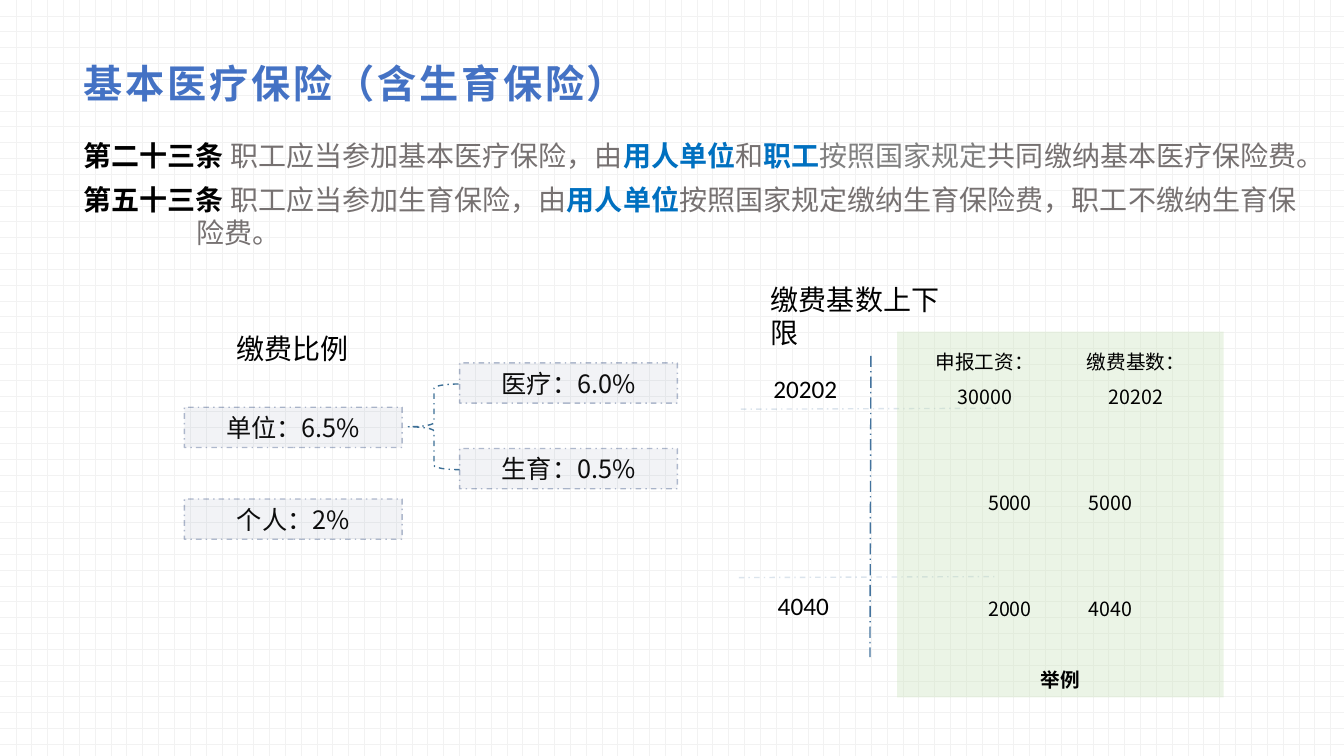
from lxml.etree import SubElement
from pptx import Presentation
from pptx.dml.color import RGBColor
from pptx.enum.dml import MSO_LINE_DASH_STYLE as Dash, MSO_PATTERN_TYPE as Pattern
from pptx.enum.shapes import MSO_CONNECTOR as Conn, MSO_SHAPE as Shape
from pptx.enum.text import MSO_ANCHOR as Anchor, PP_ALIGN as Align
from pptx.oxml.ns import qn
from pptx.util import Inches, Pt


def rgb(value):
    return RGBColor.from_string(value)


def set_alpha(fill, percent):
    color = fill._xPr.find(qn("a:solidFill"))[0]
    SubElement(color, qn("a:alpha"), val=str(percent * 1000))


class Deck:
    CJK = "Noto Sans CJK SC"
    BLACK, GRAY, MID, BLUE = "000000", "767171", "808080", "0070C0"
    NAVY, TITLE, RULE, BRACE = "002060", "4472C4", "43739E", "3C6F96"
    GREEN, INK = "C5E0B4", "0D0D0D"

    def __init__(self):
        self.prs = Presentation()
        self.prs.slide_width, self.prs.slide_height = Inches(13.33), Inches(7.5)
        self.s = self.prs.slides.add_slide(self.prs.slide_layouts[5])
        fill = self.s.background.fill
        fill.patterned()
        fill.pattern = Pattern.DOTTED_GRID
        fill.fore_color.rgb, fill.back_color.rgb = rgb("F2F2F2"), rgb("FFFFFF")

    def at(self, x, y):
        return int(self.prs.slide_width * x / 100), int(self.prs.slide_height * y / 100)

    def box(self, x, y, w, h):
        return *self.at(x, y), *self.at(w, h)

    def font(self, r, size, color, bold=False, name=CJK):
        r.font.size, r.font.bold, r.font.name = Pt(size), bold, name
        r.font.color.rgb = rgb(color)
        SubElement(r._r.get_or_add_rPr(), qn("a:ea"), typeface=self.CJK)

    def title(self, text, *area):
        sp = self.s.shapes.title
        sp.left, sp.top, sp.width, sp.height = self.box(*area)
        tf = sp.text_frame
        tf.text, tf.vertical_anchor = text, Anchor.MIDDLE
        p = tf.paragraphs[0]
        p.alignment = Align.LEFT
        r = p.runs[0]
        self.font(r, 28, self.TITLE, True, "Arial")
        r._r.get_or_add_rPr().set("spc", "200")

    def text(self, runs, *area, size=20, align=Align.LEFT, name=CJK, hang=0):
        tf = self.s.shapes.add_textbox(*self.box(*area)).text_frame
        tf.word_wrap = True
        p = tf.paragraphs[0]
        p.alignment = align
        if hang:
            pPr = p._p.get_or_add_pPr()
            pPr.set("marL", str(Inches(hang)))
            pPr.set("indent", str(-Inches(hang)))
        for words, color, bold in runs:
            r = p.add_run()
            r.text = words
            self.font(r, size, color, bold, name)

    def label(self, words, *area, **style):
        self.text([(words, self.BLACK, False)], *area, **style)

    def shape(self, kind, area, color=None, opacity=100):
        sp = self.s.shapes.add_shape(kind, *self.box(*area))
        sp.shadow.inherit = False
        if color:
            sp.fill.solid()
            sp.fill.fore_color.rgb = rgb(color)
            set_alpha(sp.fill, opacity)
        else:
            sp.fill.background()
        return sp

    def stroke(self, line, color, dash=Dash.DASH_DOT, opacity=100):
        line.width, line.color.rgb, line.dash_style = Pt(1), rgb(color), dash
        set_alpha(line.fill, opacity)

    def rate(self, words, x, y):
        sp = self.shape(Shape.RECTANGLE, (x, y, 16.2, 5.33), self.NAVY, 5)
        self.stroke(sp.line, self.NAVY, opacity=30)
        sp.text_frame.text = words
        p = sp.text_frame.paragraphs[0]
        p.alignment = Align.CENTER
        self.font(p.runs[0], 18, self.INK)

    def brace(self, *area):
        self.stroke(self.shape(Shape.LEFT_BRACE, area).line, self.BRACE)

    def rule(self, start, end, dash=Dash.DASH_DOT, opacity=100):
        c = self.s.shapes.add_connector(Conn.STRAIGHT, *self.at(*start), *self.at(*end))
        self.stroke(c.line, self.RULE, dash, opacity)
        SubElement(c._element.spPr, qn("a:effectLst"))

    def panel(self, rows, *area):
        sp = self.shape(Shape.RECTANGLE, area, self.GREEN, 33)
        sp.line.fill.background()
        tf = sp.text_frame
        tf.text = "\n".join(words for words, gap, bold in rows)
        for p, (words, gap, bold) in zip(tf.paragraphs, rows):
            p.alignment, p.line_spacing, p.space_before = Align.CENTER, 1.5, Pt(gap)
            self.font(p.runs[0], 14, self.BLACK, bold)


def main():
    d = Deck()
    d.title("基本医疗保险（含生育保险）", 5.48, 6.27, 89.02, 9.47)
    d.text([("第二十三条 ", d.BLACK, True),
            ("职工应当参加基本医疗保险，由", d.GRAY, False),
            ("用人单位", d.BLUE, True),
            ("和", d.GRAY, False),
            ("职工", d.BLUE, True),
            ("按照国家规定", d.MID, False),
            ("共同缴纳基本医疗保险费。", d.GRAY, False)], 5.48, 17.6, 94.2, 5.87)
    d.text([("第五十三条", d.BLACK, True),
            (" 职工应当参加生育保险，由", d.GRAY, False),
            ("用人单位", d.BLUE, True),
            ("按照国家规定缴纳生育保险费，职工不缴纳生育保险费。", d.GRAY, False)],
           5.48, 23.47, 92.92, 10.27, hang=1.12)

    d.label("缴费比例", 16.87, 43.2, 10, 5.87)
    for words, x, y in [("单位：6.5%", 13.72, 53.87), ("个人：2%", 13.72, 66),
                        ("医疗：6.0%", 34.2, 48), ("生育：0.5%", 34.2, 59.33)]:
        d.rate(words, x, y)
    d.brace(30.38, 50.8, 3.82, 11.33)

    d.label("缴费基数上下限", 56.62, 36.67, 15, 10.27)
    d.rule((64.8, 47.07), (64.73, 86.93), Dash.LONG_DASH_DOT)
    for limit, x, line_y, text_y in [("20202", 55.12, 54.13, 48.67),
                                     ("4040", 54.97, 76.4, 77.47)]:
        d.rule((x, line_y), (x + 19.1, line_y - 0.13), opacity=19)
        d.label(limit, x, text_y, 9.6, 5.33, size=18, align=Align.CENTER, name="Calibri")

    pitch = 25.2
    d.panel([("申报工资：\t\t缴费基数：", 0, False),
             ("30000\t\t20202", 0, False),
             ("5000\t\t5000", 2 * pitch, False),
             ("2000\t\t4040", 2 * pitch, False),
             ("举例", pitch, True)], 66.75, 43.87, 24.3, 48.4)
    d.prs.save("out.pptx")


if __name__ == "__main__":
    main()
